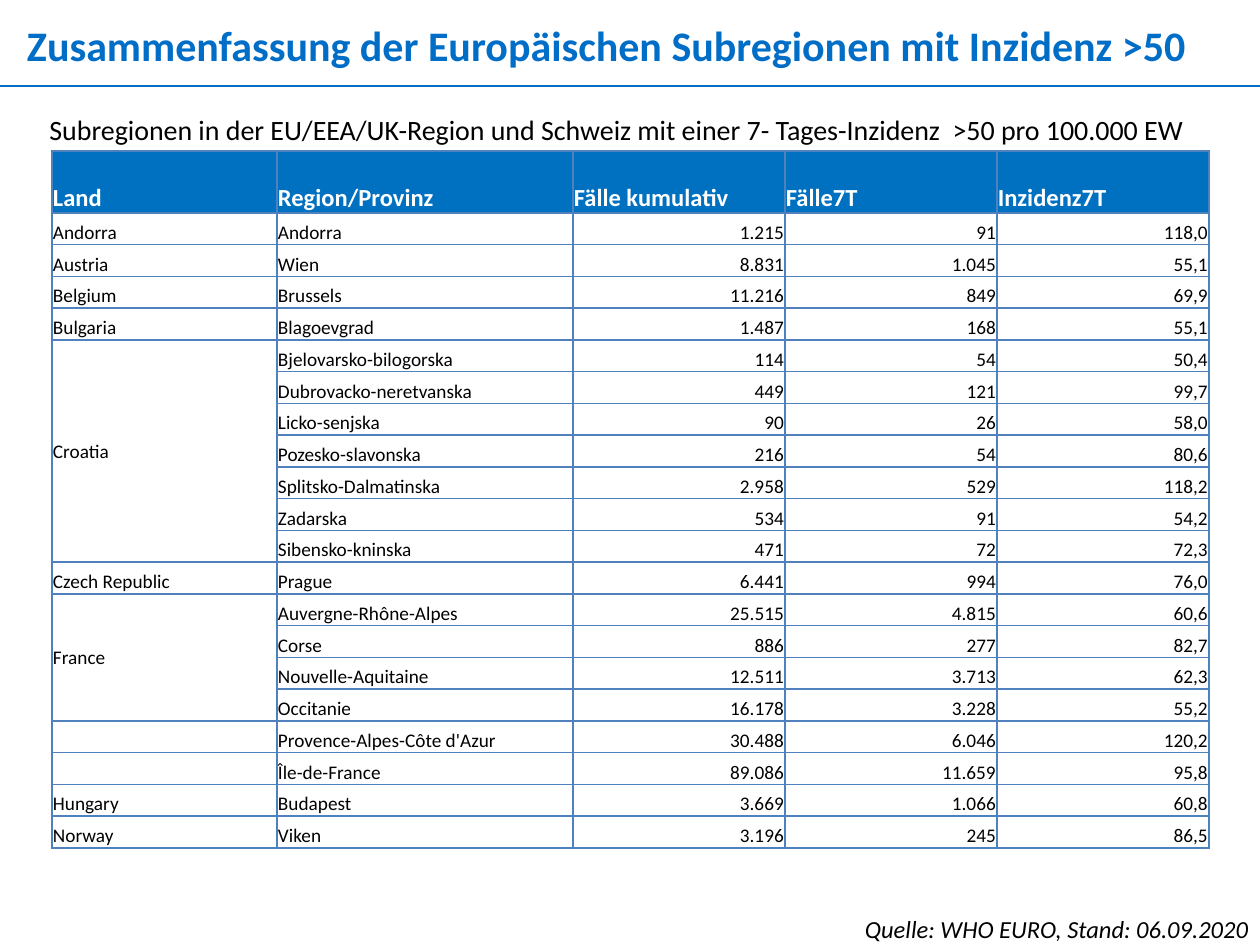
from lxml import etree
from pptx import Presentation
from pptx.dml.color import RGBColor
from pptx.enum import shapes, text
from pptx.oxml import ns
from pptx import util as u

BLUE = RGBColor(0x00, 0x6E, 0xC7)
HEAD = RGBColor(0x00, 0x70, 0xC0)
EDGE = RGBColor(0x4F, 0x81, 0xBD)
BLACK = RGBColor(0, 0, 0)
WHITE = RGBColor(255, 255, 255)

COLS = [225, 296, 212, 212, 212]
HEADS = ["Land", "Region/Provinz", "Fälle kumulativ", "Fälle7T", "Inzidenz7T"]
ROWS = [
    ("Andorra", "Andorra", "1.215", "91", "118,0"),
    ("Austria", "Wien", "8.831", "1.045", "55,1"),
    ("Belgium", "Brussels", "11.216", "849", "69,9"),
    ("Bulgaria", "Blagoevgrad", "1.487", "168", "55,1"),
    ("Croatia", "Bjelovarsko-bilogorska", "114", "54", "50,4"),
    ("", "Dubrovacko-neretvanska", "449", "121", "99,7"),
    ("", "Licko-senjska", "90", "26", "58,0"),
    ("", "Pozesko-slavonska", "216", "54", "80,6"),
    ("", "Splitsko-Dalmatinska", "2.958", "529", "118,2"),
    ("", "Zadarska", "534", "91", "54,2"),
    ("", "Sibensko-kninska", "471", "72", "72,3"),
    ("Czech Republic", "Prague", "6.441", "994", "76,0"),
    ("France", "Auvergne-Rhône-Alpes", "25.515", "4.815", "60,6"),
    ("", "Corse", "886", "277", "82,7"),
    ("", "Nouvelle-Aquitaine", "12.511", "3.713", "62,3"),
    ("", "Occitanie", "16.178", "3.228", "55,2"),
    ("", "Provence-Alpes-Côte d'Azur", "30.488", "6.046", "120,2"),
    ("", "Île-de-France", "89.086", "11.659", "95,8"),
    ("Hungary", "Budapest", "3.669", "1.066", "60,8"),
    ("Norway", "Viken", "3.196", "245", "86,5"),
]
SPANS = {"Croatia": 7, "France": 4}


def px(n):
    return u.Emu(round(n * 914400 / 126))


class Deck:
    font = "Calibri"

    def __init__(self, wide, high):
        self.prs = Presentation()
        self.prs.slide_width, self.prs.slide_height = px(wide), px(high)
        self.slide = self.prs.slides.add_slide(self.prs.slide_layouts[6])

    def style(self, para, size, color, bold=False, italic=False, right=False):
        para.alignment = text.PP_ALIGN.RIGHT if right else text.PP_ALIGN.LEFT
        for run in para.runs:
            font = run.font
            font.name, font.size = self.font, u.Pt(size)
            font.bold, font.italic = bold, italic
            font.color.rgb = color
        if not para.runs:
            # An empty cell must not stretch its row
            para._p.get_or_add_endParaRPr().set("sz", str(size * 100))

    def label(self, box, words, size, color, inset=True, **look):
        frame = self.slide.shapes.add_textbox(*map(px, box)).text_frame
        frame.word_wrap = True
        frame.auto_size = text.MSO_AUTO_SIZE.SHAPE_TO_FIT_TEXT
        if not inset:
            frame.margin_left = frame.margin_right = 0
            frame.margin_top = frame.margin_bottom = 0
        frame.text = words
        self.style(frame.paragraphs[0], size, color, **look)

    def rule(self, x1, y1, x2, y2, color, width):
        line = self.slide.shapes.add_connector(
            shapes.MSO_CONNECTOR.STRAIGHT, *map(px, (x1, y1, x2, y2)))
        line.line.color.rgb, line.line.width = color, u.Pt(width)
        etree.SubElement(line._element.spPr, ns.qn("a:effectLst"))

    def border(self, cell):
        props = cell._tc.get_or_add_tcPr()
        for side in "LRTB":
            line = etree.SubElement(props, ns.qn(f"a:ln{side}"), w=str(u.Pt(1)))
            fill = etree.SubElement(line, ns.qn("a:solidFill"))
            etree.SubElement(fill, ns.qn("a:srgbClr"), val=str(EDGE))

    def cell(self, cell, words, head, right):
        self.border(cell)
        cell.margin_left = cell.margin_right = cell.margin_top = px(1)
        cell.margin_bottom = 0
        cell.vertical_anchor = text.MSO_ANCHOR.BOTTOM
        if head:
            cell.fill.solid()
            cell.fill.fore_color.rgb = HEAD
        else:
            cell.fill.background()
        cell.text_frame.text = words
        size, color = (14, WHITE) if head else (11, BLACK)
        self.style(cell.text_frame.paragraphs[0], size, color,
                   bold=head, right=right)

    def table(self, x, y, cols, top, body, heads, rows, spans):
        grid = self.slide.shapes.add_table(
            len(rows) + 1, len(cols),
            *map(px, (x, y, sum(cols), top + body))).table
        grid.horz_banding = False
        for col, wide in zip(grid.columns, cols):
            col.width = px(wide)
        for r, row in enumerate([heads, *rows]):
            head = r == 0
            grid.rows[r].height = px(top if head else body / len(rows))
            for c, words in enumerate(row):
                self.cell(grid.cell(r, c), words, head, not head and c > 1)
        # Countries that cover several regions
        for r, row in enumerate(rows, 1):
            if row[0] in spans:
                first = grid.cell(r, 0)
                first.merge(grid.cell(r + spans[row[0]] - 1, 0))
                first.vertical_anchor = text.MSO_ANCHOR.MIDDLE


def main():
    deck = Deck(1260, 945)

    # Title and rule
    deck.label((27, 20, 1213, 51),
               "Zusammenfassung der Europäischen Subregionen mit Inzidenz >50",
               24, BLUE, inset=False, bold=True)
    deck.rule(0, 86, 1260, 86, BLUE, 1.5)

    # Source note
    deck.label((679, 908, 582, 42), "Quelle: WHO EURO, Stand: 06.09.2020",
               14, BLACK, italic=True, right=True)

    # Incidence table with its caption
    deck.table(52, 151, COLS, 62, 635, HEADS, ROWS, SPANS)
    deck.label((37, 106, 1188, 47),
               "Subregionen in der EU/EEA/UK-Region und Schweiz mit einer "
               "7- Tages-Inzidenz  >50 pro 100.000 EW", 16, BLACK)

    deck.prs.save("out.pptx")


if __name__ == "__main__":
    main()
